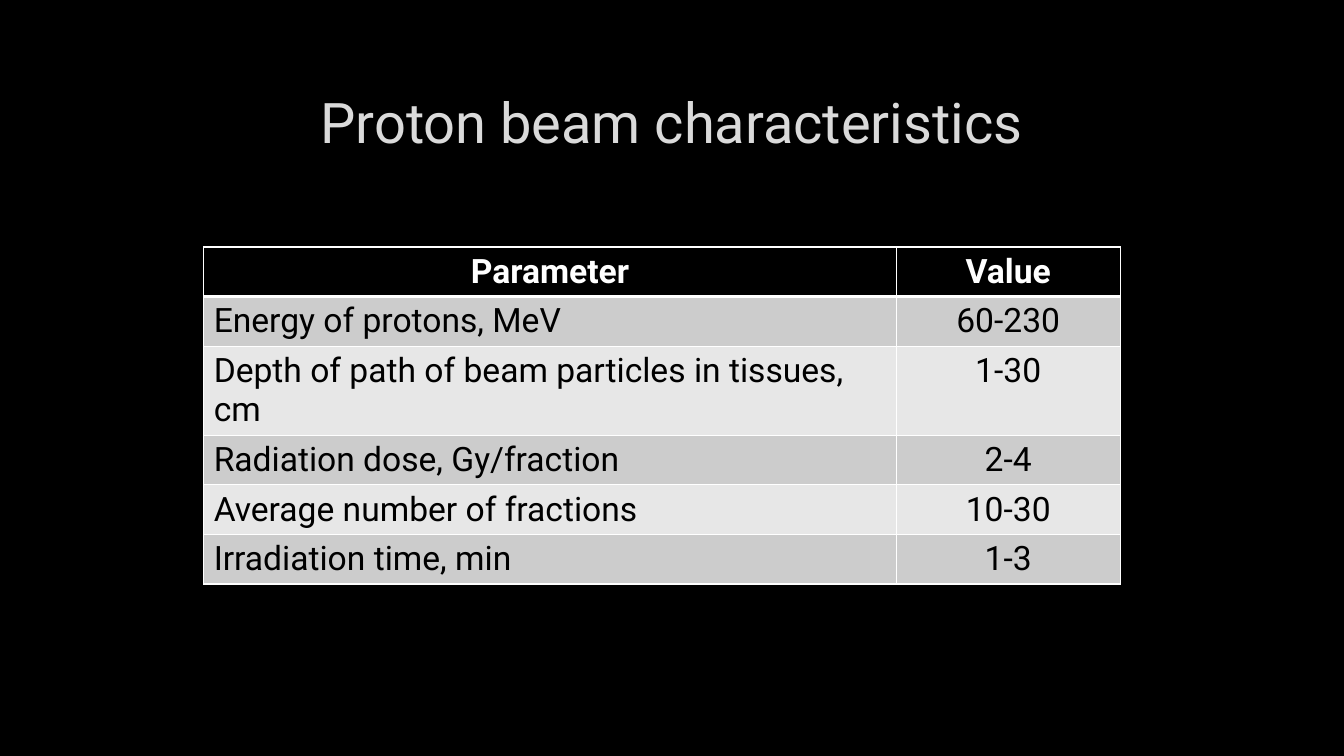
from lxml import etree
from pptx import Presentation
from pptx.dml.color import RGBColor
from pptx.enum.text import MSO_ANCHOR, PP_ALIGN
from pptx.oxml.ns import qn
from pptx.util import Inches, Pt

CENTER, LEFT = PP_ALIGN.CENTER, PP_ALIGN.LEFT
MIDDLE = MSO_ANCHOR.MIDDLE
TITLE_ONLY = 5
FONT = "Roboto"
COLORS = {
    "background": "000000",
    "title": "DADADA",
    "header": "000000",
    "header_text": "FFFFFF",
    "body_text": "000000",
    "odd_row": "CCCCCC",
    "even_row": "E7E7E7",
    "border": "FFFFFF",
}
BEAM_ROWS = [
    ("Parameter", "Value"),
    ("Energy of protons, MeV", "60-230"),
    ("Depth of path of beam particles in tissues, cm", "1-30"),
    ("Radiation dose, Gy/fraction", "2-4"),
    ("Average number of fractions", "10-30"),
    ("Irradiation time, min", "1-3"),
]
COLUMN_WIDTHS = (6.87, 2.22)
ROW_HEIGHT = 0.48


def color(name):
    return RGBColor.from_string(COLORS[name])


def format_paragraph(paragraph, size, color_name, align, bold=False):
    paragraph.alignment = align
    paragraph.font.name = FONT
    paragraph.font.size = Pt(size)
    paragraph.font.bold = bold
    paragraph.font.color.rgb = color(color_name)


def set_borders(cell, widths):
    properties = cell._tc.get_or_add_tcPr()
    for position, (side, width) in enumerate(widths.items()):
        line = etree.Element(qn(f"a:ln{side}"), w=str(Pt(width)))
        fill = etree.SubElement(line, qn("a:solidFill"))
        etree.SubElement(fill, qn("a:srgbClr"), val=COLORS["border"])
        properties.insert(position, line)


def add_title(slide, left, top, width, height):
    title = slide.shapes.title
    title.left, title.top = Inches(left), Inches(top)
    title.width, title.height = Inches(width), Inches(height)
    title.text_frame.text = "Proton beam characteristics"
    title.text_frame.vertical_anchor = MIDDLE
    format_paragraph(title.text_frame.paragraphs[0], 40, "title", CENTER)


def add_beam_table(slide, left, top):
    table = slide.shapes.add_table(
        len(BEAM_ROWS), len(COLUMN_WIDTHS), Inches(left), Inches(top),
        Inches(sum(COLUMN_WIDTHS)), Inches(ROW_HEIGHT * len(BEAM_ROWS)),
    ).table
    for column, width in zip(table.columns, COLUMN_WIDTHS):
        column.width = Inches(width)
    for r, values in enumerate(BEAM_ROWS):
        table.rows[r].height = Inches(ROW_HEIGHT)
        is_header = r == 0
        fill_name = "header" if is_header else ("even_row", "odd_row")[r % 2]
        text_name = "header_text" if is_header else "body_text"
        for c, value in enumerate(values):
            cell = table.cell(r, c)
            cell.text = value
            cell.fill.solid()
            cell.fill.fore_color.rgb = color(fill_name)
            align = CENTER if is_header or c == 1 else LEFT
            format_paragraph(cell.text_frame.paragraphs[0], 24, text_name,
                             align, is_header)
            set_borders(cell, {"L": 1, "R": 1, "T": 3 if r == 1 else 1,
                               "B": 3 if is_header else 1})


def build_beam_slide(presentation):
    slide = presentation.slides.add_slide(
        presentation.slide_layouts[TITLE_ONLY])
    slide.background.fill.solid()
    slide.background.fill.fore_color.rgb = color("background")
    add_title(slide, 1, 0.67, 11.32, 1.06)
    add_beam_table(slide, 2.02, 2.45)


def main():
    presentation = Presentation()
    presentation.slide_width = Inches(13.33)
    presentation.slide_height = Inches(7.5)
    build_beam_slide(presentation)
    presentation.save("out.pptx")


if __name__ == "__main__":
    main()
